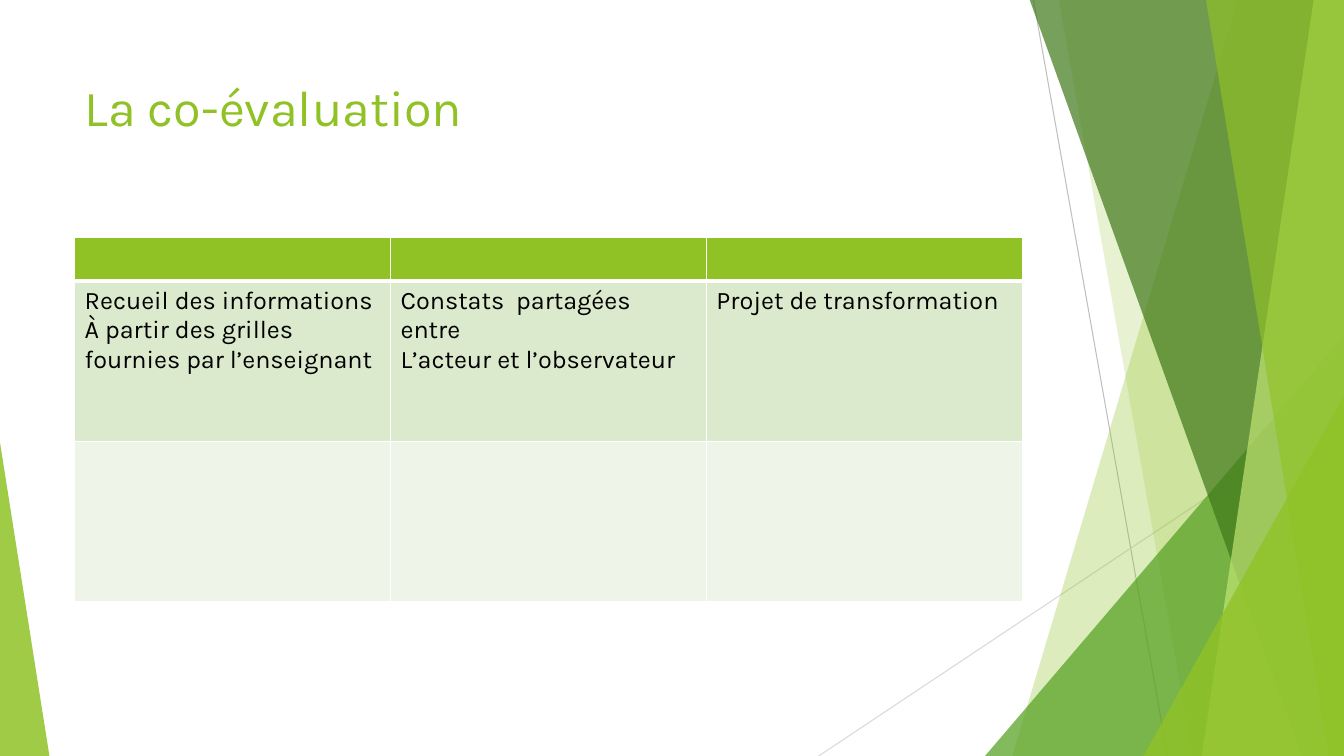
"""Build the co-evaluation slide with its faceted green border and table."""
from lxml import etree
from pptx import Presentation
from pptx.dml.color import RGBColor
from pptx.enum.shapes import MSO_CONNECTOR, MSO_SHAPE
from pptx.enum.text import MSO_ANCHOR, MSO_AUTO_SIZE, PP_ALIGN
from pptx.oxml.ns import qn
from pptx.util import Pt

STRAIGHT = MSO_CONNECTOR.STRAIGHT
TRIANGLE = MSO_SHAPE.ISOSCELES_TRIANGLE
MIDDLE = MSO_ANCHOR.MIDDLE
NO_AUTOFIT = MSO_AUTO_SIZE.NONE
LEFT = PP_ALIGN.LEFT

PX = 9144
WIDTH, HEIGHT = 1333, 750
FONT = "Karla"

LIME = RGBColor(0x90, 0xC2, 0x26)
PALE_LIME = RGBColor(0xC0, 0xE4, 0x74)
GREEN = RGBColor(0x54, 0xA0, 0x21)
DARK_GREEN = RGBColor(0x3F, 0x78, 0x19)
ROW_TINT = RGBColor(0xDB, 0xE9, 0xCD)
ROW_LIGHT = RGBColor(0xEE, 0xF4, 0xE8)
GREY = RGBColor(0xBF, 0xBF, 0xBF)
LIGHT_GREY = RGBColor(0xD9, 0xD9, 0xD9)
WHITE = RGBColor(0xFF, 0xFF, 0xFF)
BLACK = RGBColor(0, 0, 0)

ROWS = [
    (43, LIME, [[], [], []]),
    (159, ROW_TINT, [
        ["Recueil des informations",
         "À partir des grilles fournies par l’enseignant"],
        ["Constats  partagées entre", "L’acteur et l’observateur"],
        ["Projet de transformation"],
    ]),
    (159, ROW_LIGHT, [[], [], []]),
]


class Deck:
    """Hold the style and the current slide."""

    def __init__(self):
        self.prs = Presentation()
        self.prs.slide_width = WIDTH * PX
        self.prs.slide_height = HEIGHT * PX
        self.s = self.prs.slides.add_slide(self.prs.slide_layouts[5])

    def place(self, *lengths):
        return [n * PX for n in lengths]

    def add_lines(self, tf, lines, size, color):
        for i, line in enumerate(lines):
            p = tf.add_paragraph() if i else tf.paragraphs[0]
            p.alignment = LEFT
            r = p.add_run()
            r.text = line
            r.font.name = FONT
            r.font.size = Pt(size)
            r.font.bold = False
            r.font.color.rgb = color

    def title(self, text, x, y, w, h):
        sp = self.s.shapes.title
        sp.left, sp.top, sp.width, sp.height = self.place(x, y, w, h)
        tf = sp.text_frame
        tf.word_wrap = True
        tf.auto_size = NO_AUTOFIT
        tf.vertical_anchor = MIDDLE
        self.add_lines(tf, [text], 36, LIME)

    def line(self, x1, y1, x2, y2, color):
        sp = self.s.shapes.add_connector(STRAIGHT, *self.place(x1, y1, x2, y2))
        sp.line.color.rgb = color
        sp.line.width = Pt(0.75)
        etree.SubElement(sp._element.spPr, qn("a:effectLst"))

    def paint(self, sp, color, opacity):
        sp.shadow.inherit = False
        sp.line.fill.background()
        sp.fill.solid()
        sp.fill.fore_color.rgb = color
        clr = sp._element.spPr.find(".//" + qn("a:srgbClr"))
        etree.SubElement(clr, qn("a:alpha"), val=str(opacity * 1000))

    def band(self, top_x, bottom_x, color, opacity):
        corners = [(WIDTH, -1), (WIDTH, HEIGHT), (bottom_x, HEIGHT)]
        builder = self.s.shapes.build_freeform(*self.place(top_x, -1))
        builder.add_line_segments([self.place(*c) for c in corners])
        self.paint(builder.convert_to_shape(), color, opacity)

    def triangle(self, x, y, w, apex, color, opacity):
        sp = self.s.shapes.add_shape(
            TRIANGLE, *self.place(x, y, w, HEIGHT - y))
        sp.adjustments[0] = apex
        self.paint(sp, color, opacity)

    def border(self, cell, widths):
        tc_pr = cell._tc.get_or_add_tcPr()
        for i, (side, width) in enumerate(zip("LRTB", widths)):
            ln = etree.Element(qn("a:ln" + side), w=str(Pt(width)))
            fill = etree.SubElement(ln, qn("a:solidFill"))
            etree.SubElement(fill, qn("a:srgbClr"), val=str(WHITE))
            tc_pr.insert(i, ln)

    def table(self, x, y, w, rows):
        columns = len(rows[0][2])
        h = sum(row[0] for row in rows)
        table = self.s.shapes.add_table(
            len(rows), columns, *self.place(x, y, w, h)).table
        table.first_row = table.horz_banding = False
        for i, (height, color, cells) in enumerate(rows):
            table.rows[i].height = height * PX
            top, bottom = 3 if i == 1 else 1, 3 if i == 0 else 1
            for j, lines in enumerate(cells):
                cell = table.cell(i, j)
                cell.fill.solid()
                cell.fill.fore_color.rgb = color
                self.border(cell, (1, 1, top, bottom))
                self.add_lines(cell.text_frame, lines, 18, BLACK)


def main():
    deck = Deck()
    deck.line(1025, 0, 1158, HEIGHT, GREY)
    deck.line(WIDTH, 403, 812, HEIGHT, LIGHT_GREY)
    deck.band(1228, 1004, LIME, 30)
    deck.band(1050, 1183, LIME, 20)
    deck.triangle(977, 333, 356, 1, GREEN, 72)
    deck.band(1021, 1291, DARK_GREEN, 70)
    deck.band(1303, 1192, PALE_LIME, 70)
    deck.band(1196, 1318, LIME, 65)
    deck.triangle(1134, 393, 199, 1, LIME, 80)
    deck.triangle(0, 439, 49, 0, LIME, 85)
    deck.title("La co-évaluation", 74, 67, 940, 78)
    deck.table(74, 236, 940, ROWS)
    deck.prs.save("out.pptx")


if __name__ == "__main__":
    main()
